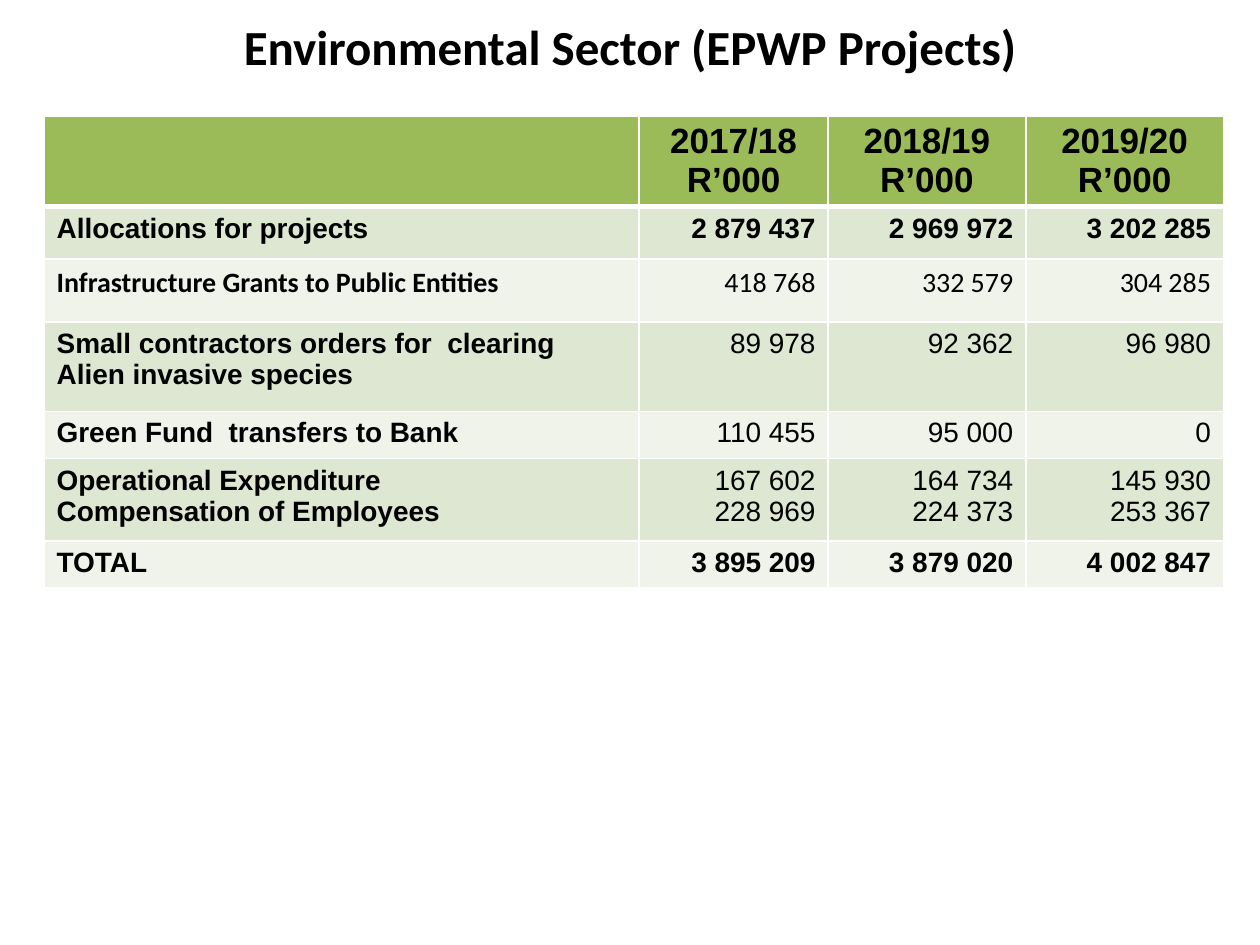
from dataclasses import dataclass

from lxml.etree import SubElement
from pptx import Presentation
from pptx.dml.color import RGBColor as Color
from pptx.enum.text import MSO_ANCHOR as Anchor, PP_ALIGN as Align
from pptx.oxml.ns import qn
from pptx.util import Pt


@dataclass(frozen=True)
class Theme:
    ink: str = "000000"
    line: str = "FFFFFF"
    head: str = "9BBB59"
    bands: tuple = ("DEE7D1", "EFF3EA")
    sans: str = "Arial"
    alt: str = "Calibri"
    title: int = 28
    top: int = 20
    body: int = 16


THEME = Theme()
COLS = (340, 108, 113, 113)
HEIGHTS = (47, 30, 36, 51, 27, 47, 27)
YEARS = ("2017/18", "2018/19", "2019/20")
# label, yearly values, bold values, font
ROWS = (
    ("Allocations for projects",
     ("2 879 437", "2 969 972", "3 202 285"), True, THEME.sans),
    ("Infrastructure Grants to Public Entities",
     ("418 768", "332 579", "304 285"), False, THEME.alt),
    ("Small contractors orders for  clearing\nAlien invasive species",
     ("89 978", "92 362", "96 980"), False, THEME.sans),
    ("Green Fund  transfers to Bank",
     ("110 455", "95 000", "0"), False, THEME.sans),
    ("Operational Expenditure\nCompensation of Employees",
     ("167 602\n228 969", "164 734\n224 373", "145 930\n253 367"),
     False, THEME.sans),
    ("TOTAL",
     ("3 895 209", "3 879 020", "4 002 847"), True, THEME.sans),
)


def write(frame, text, size=THEME.body, font=THEME.sans, bold=True,
          align=Align.LEFT):
    """Fill a text frame, one paragraph to each line of text."""
    frame.text = text
    for para in frame.paragraphs:
        para.alignment = align
        for run in para.runs:
            run.font.size = Pt(size)
            run.font.name = font
            run.font.bold = bold
            run.font.color.rgb = Color.from_string(THEME.ink)


def paint(cell, fill, base=1):
    """Set the white borders, the lower one base points wide, and the fill."""
    props = cell._tc.get_or_add_tcPr()
    for side, width in zip("LRTB", (1, 1, 1, base)):
        line = SubElement(props, qn(f"a:ln{side}"), w=str(Pt(width)))
        solid = SubElement(line, qn("a:solidFill"))
        SubElement(solid, qn("a:srgbClr"), val=THEME.line)
    cell.fill.solid()
    cell.fill.fore_color.rgb = Color.from_string(fill)


def add_title(slide, text):
    title = slide.shapes.title
    title.left, title.top = Pt(36), Pt(10)
    title.width, title.height = Pt(648), Pt(33)
    title.text_frame.vertical_anchor = Anchor.MIDDLE
    write(title.text_frame, text, size=THEME.title, font=THEME.alt,
          align=Align.CENTER)


def add_budget(slide):
    table = slide.shapes.add_table(
        len(HEIGHTS), len(COLS), Pt(25.2), Pt(66.2),
        Pt(sum(COLS)), Pt(sum(HEIGHTS))).table
    for col, width in zip(table.columns, COLS):
        col.width = Pt(width)
    for row, height in zip(table.rows, HEIGHTS):
        row.height = Pt(height)

    for cell in table.rows[0].cells:
        paint(cell, THEME.head, base=3)
    for c, year in enumerate(YEARS, 1):
        write(table.cell(0, c).text_frame, f"{year}\nR’000",
              size=THEME.top, align=Align.CENTER)

    for r, (label, values, bold, font) in enumerate(ROWS, 1):
        for cell in table.rows[r].cells:
            paint(cell, THEME.bands[(r - 1) % 2])
        write(table.cell(r, 0).text_frame, label, font=font)
        for c, value in enumerate(values, 1):
            write(table.cell(r, c).text_frame, value, font=font, bold=bold,
                  align=Align.RIGHT)


def main():
    deck = Presentation()
    deck.slide_width, deck.slide_height = Pt(720), Pt(540)
    slide = deck.slides.add_slide(deck.slide_layouts[5])
    add_title(slide, "Environmental Sector (EPWP Projects)")
    add_budget(slide)
    deck.save("out.pptx")


if __name__ == "__main__":
    main()
